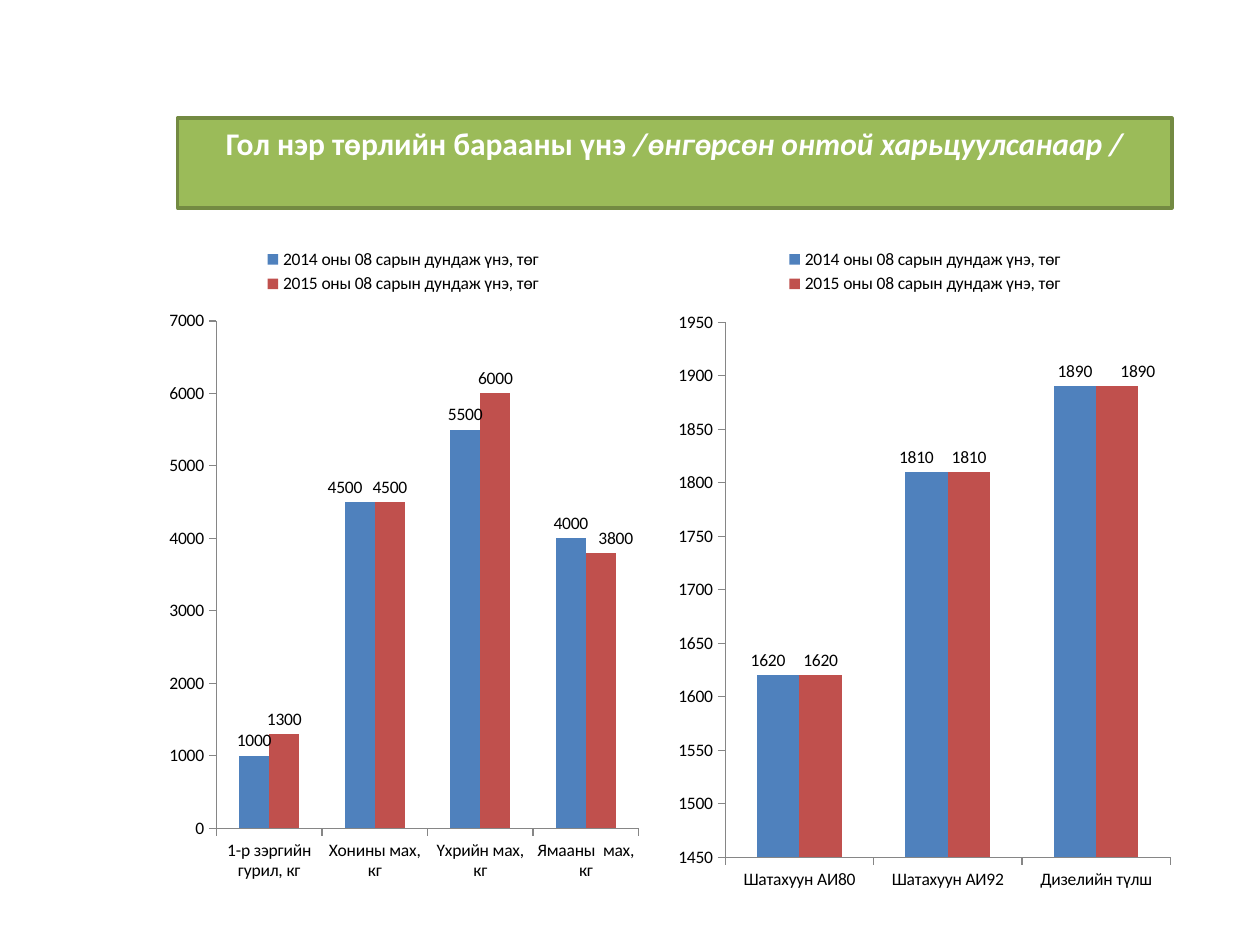
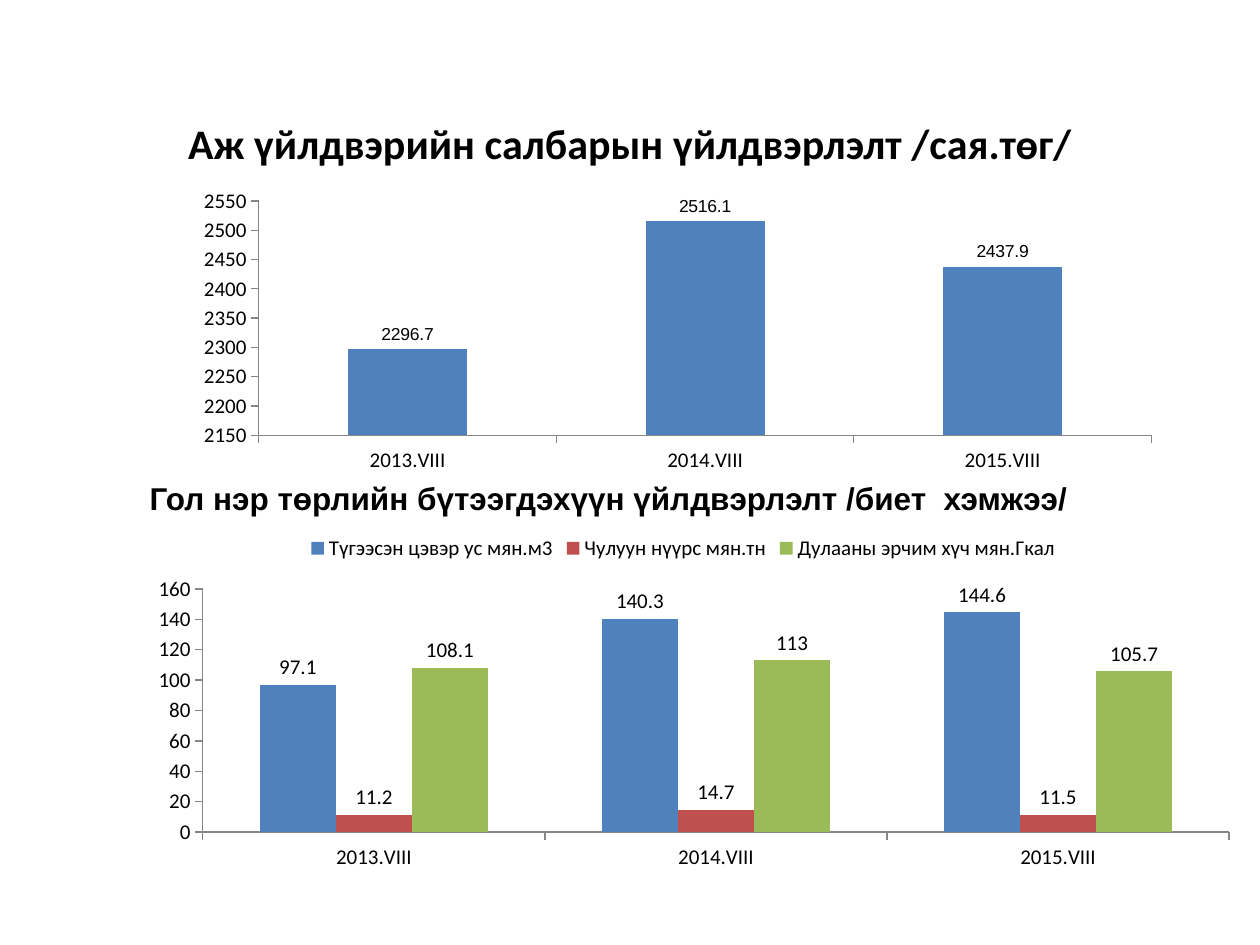
import dataclasses

import lxml.etree
import pptx
import pptx.chart.data
import pptx.dml.color
import pptx.enum.chart
import pptx.enum.text
import pptx.oxml.ns
import pptx.util

# Shared style
SLIDE_WIDTH, SLIDE_HEIGHT = 10, 7.5
BODY_FONT, HEADING_FONT = "Calibri", "Arial"
BLACK, WHITE, AXIS_GRAY = "000000", "FFFFFF", "868686"
BANNER_FILL, BANNER_LINE = "9BBB59", "738A42"
SERIES_COLORS = ["4F81BD", "C0504D", "9BBB59"]
MONTHS = ["2013.VIII", "2014.VIII", "2015.VIII"]
PRICE_SERIES = [f"{year} оны 08 сарын дундаж үнэ, төг" for year in (2014, 2015)]


@dataclasses.dataclass
class Box:
    """A box in inches; region() cuts out a smaller box by shares of it."""
    left: float
    top: float
    width: float
    height: float

    def region(self, left, top, width, height):
        return Box(self.left + left * self.width, self.top + top * self.height,
                   width * self.width, height * self.height)

    def lengths(self):
        return [pptx.util.Inches(value) for value in dataclasses.astuple(self)]


SLIDE_BOX = Box(0, 0, SLIDE_WIDTH, SLIDE_HEIGHT)


def color(hex_string):
    return pptx.dml.color.RGBColor.from_string(hex_string)


def format_font(font, size, font_name=BODY_FONT, hex_color=BLACK, bold=False, italic=False):
    font.size = pptx.util.Pt(size)
    font.name = font_name
    font.color.rgb = color(hex_color)
    font.bold = bold
    font.italic = italic


def write_text(shape, text, italic_text="", size=18, align="CENTER", anchor="TOP", **style):
    """Write one bold paragraph, with an optional italic ending."""
    frame = shape.text_frame
    frame.word_wrap = True
    frame.auto_size = pptx.enum.text.MSO_AUTO_SIZE.NONE
    frame.vertical_anchor = pptx.enum.text.MSO_ANCHOR[anchor]
    paragraph = frame.paragraphs[0]
    paragraph.alignment = pptx.enum.text.PP_ALIGN[align]
    for content, italic in ((text, False), (italic_text, True)):
        if content:
            run = paragraph.add_run()
            run.text = content
            format_font(run.font, size, bold=True, italic=italic, **style)


def place_title(slide, box, text, **style):
    title = slide.shapes.title
    title.left, title.top, title.width, title.height = box.lengths()
    write_text(title, text, **style)
    return title


def set_layout(parent, index, **values):
    """Insert a manual layout as the child of parent at the given index."""
    layout = lxml.etree.Element(pptx.oxml.ns.qn("c:layout"))
    manual = lxml.etree.SubElement(layout, pptx.oxml.ns.qn("c:manualLayout"))
    for tag, value in values.items():
        lxml.etree.SubElement(manual, pptx.oxml.ns.qn(f"c:{tag}"), val=str(value))
    for old_layout in parent.findall(pptx.oxml.ns.qn("c:layout")):
        parent.remove(old_layout)
    parent.insert(index, layout)


def format_axes(chart, minimum, maximum, step):
    for axis in (chart.category_axis, chart.value_axis):
        axis.has_major_gridlines = False
        axis.major_tick_mark = pptx.enum.chart.XL_TICK_MARK.OUTSIDE
        axis.minor_tick_mark = pptx.enum.chart.XL_TICK_MARK.NONE
        axis.format.line.color.rgb = color(AXIS_GRAY)
        axis.format.line.width = pptx.util.Pt(0.75)
    chart.value_axis.minimum_scale = minimum
    chart.value_axis.maximum_scale = maximum
    chart.value_axis.major_unit = step


def add_columns(slide, box, categories, series_values, scale, plot_box, size=10,
                legend=True, label_size=None, label_font=BODY_FONT, label_shifts=None):
    """Add a column chart; label_shifts maps (series, point) to a sideways share."""
    chart_data = pptx.chart.data.CategoryChartData()
    chart_data.categories = categories
    for name, values in series_values.items():
        chart_data.add_series(name, values)
    chart = slide.shapes.add_chart(pptx.enum.chart.XL_CHART_TYPE.COLUMN_CLUSTERED,
                                   *box.lengths(), chart_data).chart
    format_font(chart.font, size)
    chart.has_title = False
    chart.has_legend = legend
    if legend:
        chart.legend.position = pptx.enum.chart.XL_LEGEND_POSITION.TOP
        chart.legend.include_in_layout = False
    format_axes(chart, *scale)

    # Bars and their value labels
    plot = chart.plots[0]
    plot.gap_width, plot.overlap, plot.vary_by_categories = 150, 0, False
    outside_end = pptx.enum.chart.XL_LABEL_POSITION.OUTSIDE_END
    for series, hex_color in zip(plot.series, SERIES_COLORS):
        series.format.fill.solid()
        series.format.fill.fore_color.rgb = color(hex_color)
        series.data_labels.show_value = True
        series.data_labels.position = outside_end
        format_font(series.data_labels.font, label_size or size, label_font)
    for (series_index, point_index), shift in (label_shifts or {}).items():
        series = plot.series[series_index]
        label = series.points[point_index].data_label
        format_font(label.font, label_size or size, label_font)
        label.position = outside_end
        for element in series._element.iter(pptx.oxml.ns.qn("c:dLbl")):
            if element.find(pptx.oxml.ns.qn("c:idx")).get("val") == str(point_index):
                set_layout(element, 1, x=shift, y=0)

    # Inner plot area
    left, top, width, height = plot_box
    plot_area = chart._chartSpace.find(".//" + pptx.oxml.ns.qn("c:plotArea"))
    set_layout(plot_area, 0, layoutTarget="inner", xMode="edge", yMode="edge",
               x=left, y=top, w=width, h=height)


def add_banner(slide, box):
    banner = place_title(slide, box, "Гол нэр төрлийн барааны үнэ ",
                         italic_text="/өнгөрсөн онтой харьцуулсанаар /", hex_color=WHITE)
    banner.fill.solid()
    banner.fill.fore_color.rgb = color(BANNER_FILL)
    banner.line.color.rgb = color(BANNER_LINE)
    banner.line.width = pptx.util.Pt(2)


def add_price_charts(slide, box):
    # Food on the left, fuel on the right
    add_columns(slide, box.region(0, 0, 0.48, 0.985),
                ["1-р зэргийн гурил, кг", "Хонины мах, кг", "Үхрийн мах, кг", "Ямааны  мах, кг"],
                dict(zip(PRICE_SERIES, [(1000, 4500, 5500, 4000), (1300, 4500, 6000, 3800)])),
                scale=(0, 7000, 1000), plot_box=(0.12, 0.13, 0.86, 0.77),
                label_shifts={(0, 1): -0.03, (1, 3): 0.03})
    add_columns(slide, box.region(0.5, 0, 0.5, 1),
                ["Шатахуун АИ80", "Шатахуун АИ92", "Дизелийн түлш"],
                dict.fromkeys(PRICE_SERIES, (1620, 1810, 1890)),
                scale=(1450, 1950, 50), plot_box=(0.11, 0.13, 0.87, 0.8),
                label_shifts={(0, 0): -0.02, (0, 1): -0.02, (1, 2): 0.04})


def add_output_chart(slide, box):
    add_columns(slide, box, MONTHS, {"Үйлдвэрлэлт": (2296.7, 2516.1, 2437.9)},
                scale=(2150, 2550, 50), plot_box=(0.09, 0.08, 0.88, 0.8),
                size=12, legend=False, label_size=10, label_font=HEADING_FONT)


def add_product_panel(slide, box):
    # Heading above the chart
    heading = slide.shapes.add_textbox(*box.region(0, 0, 1, 0.12).lengths())
    write_text(heading, "Гол нэр төрлийн бүтээгдэхүүн үйлдвэрлэлт /биет  хэмжээ/",
               align="LEFT", font_name=HEADING_FONT)
    add_columns(slide, box.region(0, 0.116, 1, 0.884), MONTHS,
                {"Түгээсэн цэвэр ус мян.м3": (97.1, 140.3, 144.6),
                 "Чулуун нүүрс мян.тн": (11.2, 14.7, 11.5),
                 "Дулааны эрчим хүч мян.Гкал": (108.1, 113, 105.7)},
                scale=(0, 160, 20), plot_box=(0.06, 0.18, 0.94, 0.65), size=12)


def build_price_slide(slide):
    add_banner(slide, SLIDE_BOX.region(0.141, 0.125, 0.789, 0.095))
    add_price_charts(slide, SLIDE_BOX.region(0.125, 0.249, 0.812, 0.708))


def build_industry_slide(slide):
    place_title(slide, SLIDE_BOX.region(0.05, 0.104, 0.9, 0.093),
                "Аж үйлдвэрийн салбарын үйлдвэрлэлт /сая.төг/", size=24, anchor="MIDDLE")
    add_output_chart(slide, SLIDE_BOX.region(0.133, 0.188, 0.805, 0.312))
    add_product_panel(slide, SLIDE_BOX.region(0.109, 0.5, 0.867, 0.448))


def main():
    presentation = pptx.Presentation()
    presentation.slide_width = pptx.util.Inches(SLIDE_WIDTH)
    presentation.slide_height = pptx.util.Inches(SLIDE_HEIGHT)
    title_only = presentation.slide_layouts.get_by_name("Title Only")
    for build_slide in (build_price_slide, build_industry_slide):
        build_slide(presentation.slides.add_slide(title_only))
    presentation.save("out.pptx")


if __name__ == "__main__":
    main()
